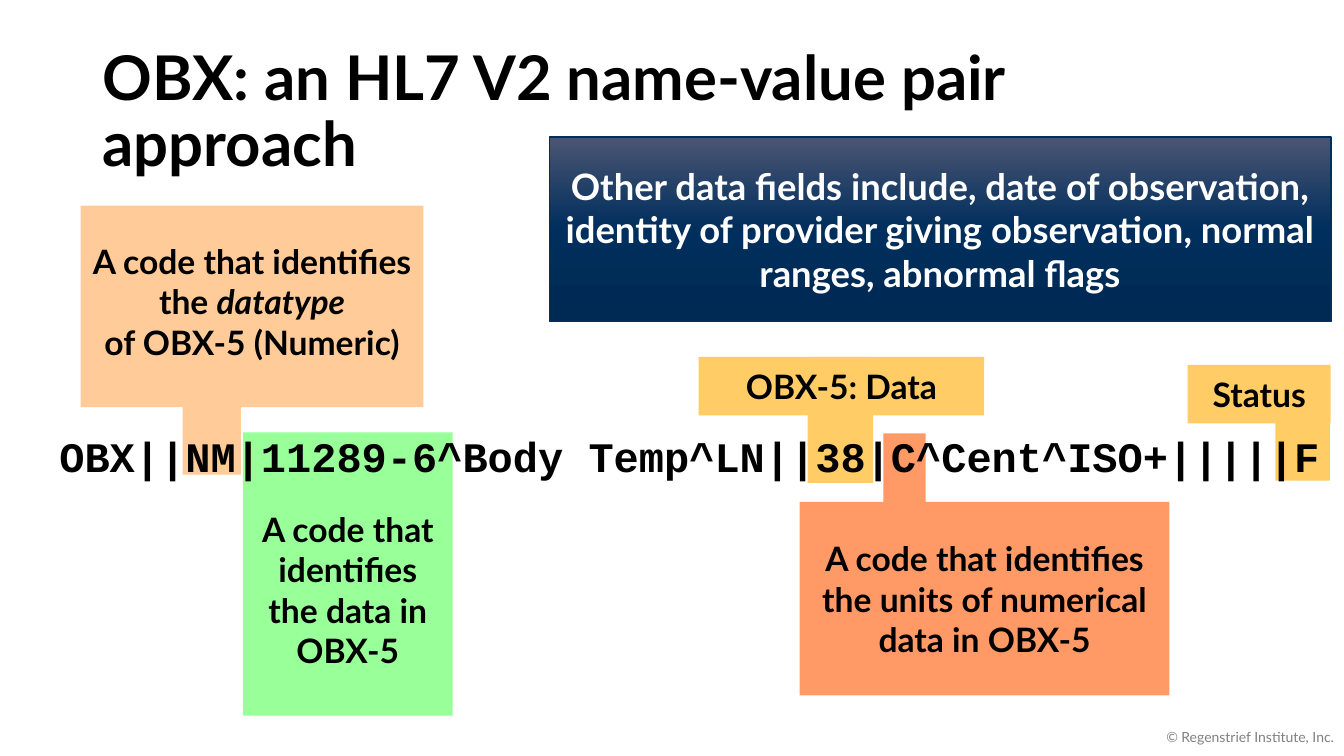
from copy import deepcopy
from pptx import Presentation
from pptx.dml.color import RGBColor as RGB
from pptx.enum.shapes import MSO_SHAPE as Shape
from pptx.enum.text import MSO_ANCHOR as Anchor, PP_ALIGN as Align
from pptx.oxml.ns import qn
from pptx.util import Inches, Pt

BLACK = RGB(0x00, 0x00, 0x00)
WHITE = RGB(0xFF, 0xFF, 0xFF)
GREY = RGB(0x80, 0x80, 0x80)
GOLD = RGB(0xFF, 0xCC, 0x66)
CORAL = RGB(0xFF, 0x99, 0x66)
PEACH = RGB(0xFF, 0xCC, 0x99)
GREEN = RGB(0x99, 0xFF, 0x99)
SLATE = RGB(0x4B, 0x55, 0x72)
NAVY = RGB(0x00, 0x2E, 0x5D)
DEEP = RGB(0x00, 0x29, 0x53)

deck = Presentation()
deck.slide_width = Inches(13.33)
deck.slide_height = Inches(7.5)
slide = deck.slides.add_slide(deck.slide_layouts[6])


def place(area, fill=None):
    x, y, w, h = area
    wide, high = deck.slide_width / 100, deck.slide_height / 100
    spot = [int(n) for n in (x * wide, y * high, w * wide, h * high)]
    if fill is None:
        return slide.shapes.add_textbox(*spot)
    box = slide.shapes.add_shape(Shape.RECTANGLE, *spot)
    box.shadow.inherit = False
    box.fill.solid()
    box.fill.fore_color.rgb = fill
    box.line.fill.background()
    return box


def write(box, lines, frame={}, para={}, face={}, color=BLACK):
    text = box.text_frame
    for key, value in {"word_wrap": True, "vertical_anchor": Anchor.MIDDLE, **frame}.items():
        setattr(text, key, value)
    for i, line in enumerate(lines):
        row = text.add_paragraph() if i else text.paragraphs[0]
        for key, value in {"alignment": Align.CENTER, **para}.items():
            setattr(row, key, value)
        for j, part in enumerate(line.split("*")):
            run = row.add_run()
            run.text = part
            look = {"name": "Lato", "size": Pt(24), "bold": True, "italic": j % 2 == 1}
            for key, value in {**look, **face}.items():
                setattr(run.font, key, value)
            run.font.color.rgb = color


LEFT = {"alignment": Align.LEFT}
LOW = {"vertical_anchor": Anchor.BOTTOM, "margin_bottom": Inches(0.45)}

write(place((6.9, 5.33, 86.27, 19.33)), ["OBX: an HL7 V2 name-value pair approach"],
      para={**LEFT, "line_spacing": 0.9}, face={"size": Pt(44)})

notes = [
    (GOLD, (94.9, 49.47, 4.05, 14.13), (88.37, 48.27, 10.65, 7.73), ["Status"], {}),
    (CORAL, (65.72, 57.33, 3.15, 30), (59.49, 66.4, 27.53, 25.6),
     ["A code that identifies the units of numerical data in OBX-5"], {}),
    (PEACH, (13.58, 46.13, 4.35, 16.67), (6, 27.2, 25.51, 26.67),
     ["A code that identifies the *datatype*", "of OBX-5 (Numeric)"], LOW),
    (GREEN, None, (18.08, 57.2, 15.6, 37.47),
     ["A code that identifies the data in OBX-5"], LOW),
    (GOLD, (60.09, 47.2, 4.88, 16.67), (51.99, 47.2, 21.23, 7.73), ["OBX-5: Data"], {}),
]
for fill, stem, area, lines, frame in notes:
    if stem:
        place(stem, fill)
    write(place(area, fill), lines, frame)

write(place((3.68, 56.27, 96.32, 8.13)),
      ["OBX||NM|11289-6^Body Temp^LN||38|C^Cent^ISO+|||||F"],
      {"word_wrap": False, "vertical_anchor": Anchor.TOP}, LEFT,
      {"name": "Courier New", "size": Pt(30)})

other = place((40.89, 18.13, 58.14, 24.4), NAVY)
other.line.color.rgb = NAVY
other.line.width = Pt(1)
other.fill.gradient()
other.fill.gradient_angle = 270
stops = other._element.spPr.find(qn("a:gradFill")).find(qn("a:gsLst"))
stops.insert(1, deepcopy(stops[0]))
for stop, spot, tint in zip(other.fill.gradient_stops, (0, 0.5, 1), (SLATE, NAVY, DEEP)):
    stop.position = spot
    stop.color.rgb = tint
write(other, ["Other data fields include, date of observation, identity of provider "
              "giving observation, normal ranges, abnormal flags"],
      face={"size": Pt(26)}, color=WHITE)

write(place((77.49, 94.8, 22.5, 5.33)), ["© Regenstrief Institute, Inc."],
      para={"alignment": Align.RIGHT}, face={"size": Pt(10), "bold": False}, color=GREY)

deck.save("out.pptx")
